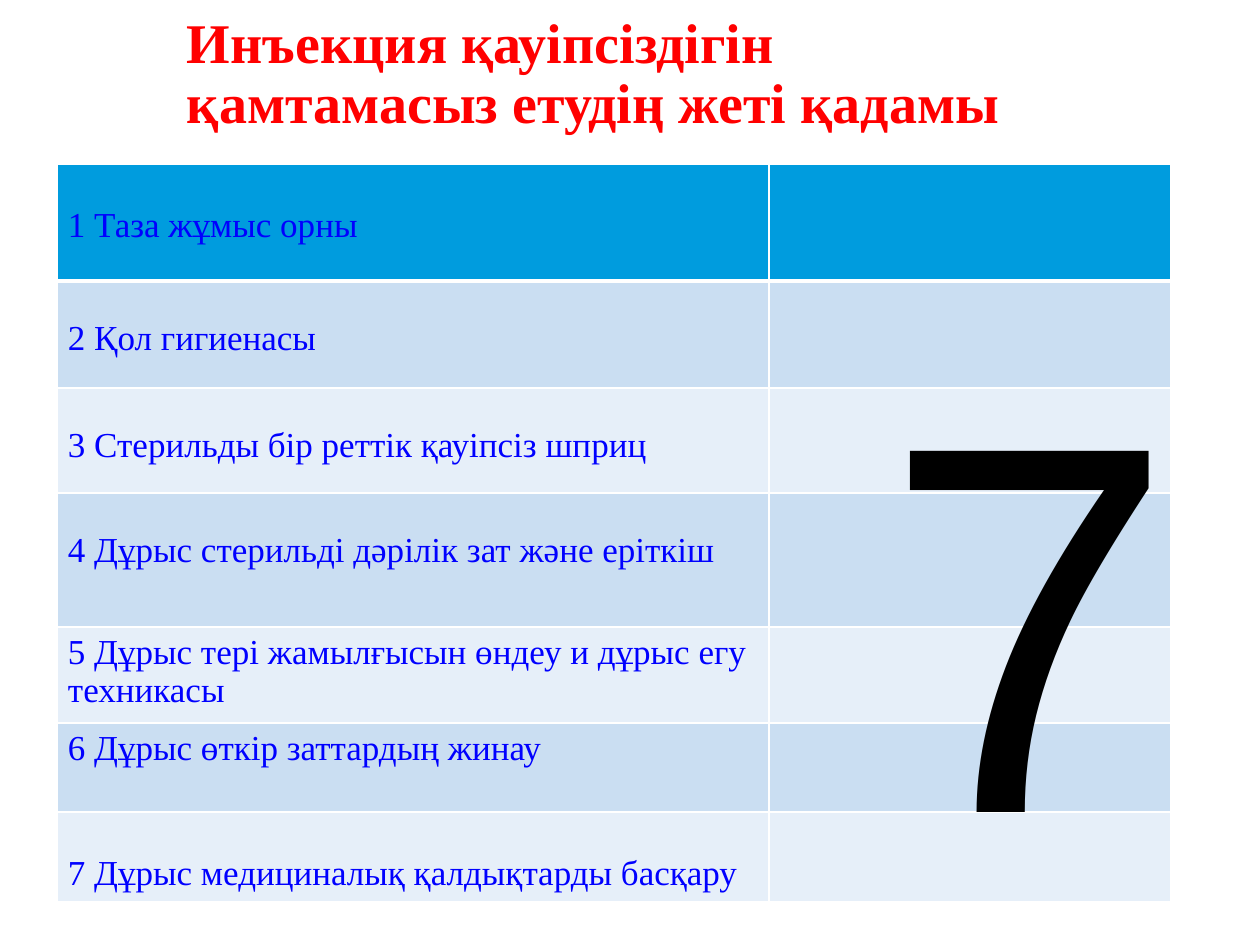
from lxml import etree
from pptx import Presentation
from pptx.dml.color import RGBColor
from pptx.enum.text import MSO_ANCHOR, PP_ALIGN
from pptx.oxml.ns import qn
from pptx.util import Pt

PX = 914400 // 126
BOTTOM, TOP = MSO_ANCHOR.BOTTOM, MSO_ANCHOR.TOP
LEFT, CENTER = PP_ALIGN.LEFT, PP_ALIGN.CENTER
COLORS = {
    "title": "FF0000", "step": "0000FF", "digit": "000000", "border": "FFFFFF",
    "header": "009CDE", "band": "CADEF2", "light": "E6EFF9",
}
SERIF, SANS = "Times New Roman", "Arial"
STEPS = [
    ("1 Таза жұмыс орны", 117, 42),
    ("2 Қол гигиенасы", 107, 38),
    ("3 Стерильды бір реттік қауіпсіз шприц", 105, 38),
    ("4 Дұрыс стерильді дәрілік зат және еріткіш", 134, 38),
    ("5 Дұрыс тері жамылғысын өндеу и дұрыс егу техникасы", 89, 6),
    ("6 Дұрыс өткір заттардың жинау", 89, 6),
    ("7 Дұрыс медициналық қалдықтарды басқару", 89, 42),
]


def px(n):
    """Convert pixels to EMU."""
    return n * PX


def style(p, size, color, font, bold=False, align=LEFT):
    """Set the font and alignment of a paragraph."""
    p.alignment = align
    p.font.size, p.font.name, p.font.bold = Pt(size), font, bold
    p.font.color.rgb = RGBColor.from_string(COLORS[color])


def set_margins(item, left, top, right, bottom):
    """Set the inner margins of a text frame or cell."""
    item.margin_left, item.margin_top = px(left), px(top)
    item.margin_right, item.margin_bottom = px(right), px(bottom)


def set_borders(cell, bottom):
    """Draw white borders around a cell, with its own bottom width."""
    tcPr = cell._tc.get_or_add_tcPr()
    widths = {"a:lnL": 1, "a:lnR": 1, "a:lnT": 1, "a:lnB": bottom}
    for i, (tag, width) in enumerate(widths.items()):
        ln = etree.Element(qn(tag), w=str(Pt(width)))
        fill = etree.SubElement(ln, qn("a:solidFill"))
        etree.SubElement(fill, qn("a:srgbClr"), val=COLORS["border"])
        tcPr.insert(i, ln)


def add_text(s, box, text, margins, anchor):
    """Add a wrapping text box and return its paragraph."""
    tf = s.shapes.add_textbox(*map(px, box)).text_frame
    tf.word_wrap, tf.vertical_anchor = True, anchor
    set_margins(tf, *margins)
    p = tf.paragraphs[0]
    p.text = text
    return p


def add_title(s, box):
    """Add the slide title."""
    p = add_text(s, box, "Инъекция қауіпсіздігін қамтамасыз етудің жеті қадамы",
                 (3, 0, 60, 0), BOTTOM)
    style(p, 32, "title", SERIF, bold=True)
    p.line_spacing = 0.9


def add_steps(s, box, first_width):
    """Add the table of seven steps."""
    table = s.shapes.add_table(len(STEPS), 2, *map(px, box)).table
    table.columns[0].width = px(first_width)
    table.columns[1].width = px(box[2] - first_width)
    for i, (text, height, top) in enumerate(STEPS):
        table.rows[i].height = px(height)
        fill = "header" if i == 0 else "band" if i % 2 else "light"
        for cell in table.rows[i].cells:
            cell.fill.solid()
            cell.fill.fore_color.rgb = RGBColor.from_string(COLORS[fill])
            set_borders(cell, 1 if i else 3)
        cell = table.cell(i, 0)
        set_margins(cell, 11, top, 11, 6)
        cell.text = text
        style(cell.text_frame.paragraphs[0], 20, "step", SERIF)


def add_digit(s, box):
    """Add the large seven over the table."""
    p = add_text(s, box, "7", (11, 5, 11, 5), TOP)
    style(p, 300, "digit", SANS, align=CENTER)


def main():
    """Build and save the slide."""
    prs = Presentation()
    prs.slide_width, prs.slide_height = px(1260), px(945)
    s = prs.slides.add_slide(prs.slide_layouts[6])
    add_title(s, (184, 29, 953, 107))
    add_steps(s, (57, 164, 1114, 730), 712)
    add_digit(s, (873, 282, 247, 648))
    prs.save("out.pptx")


if __name__ == "__main__":
    main()
